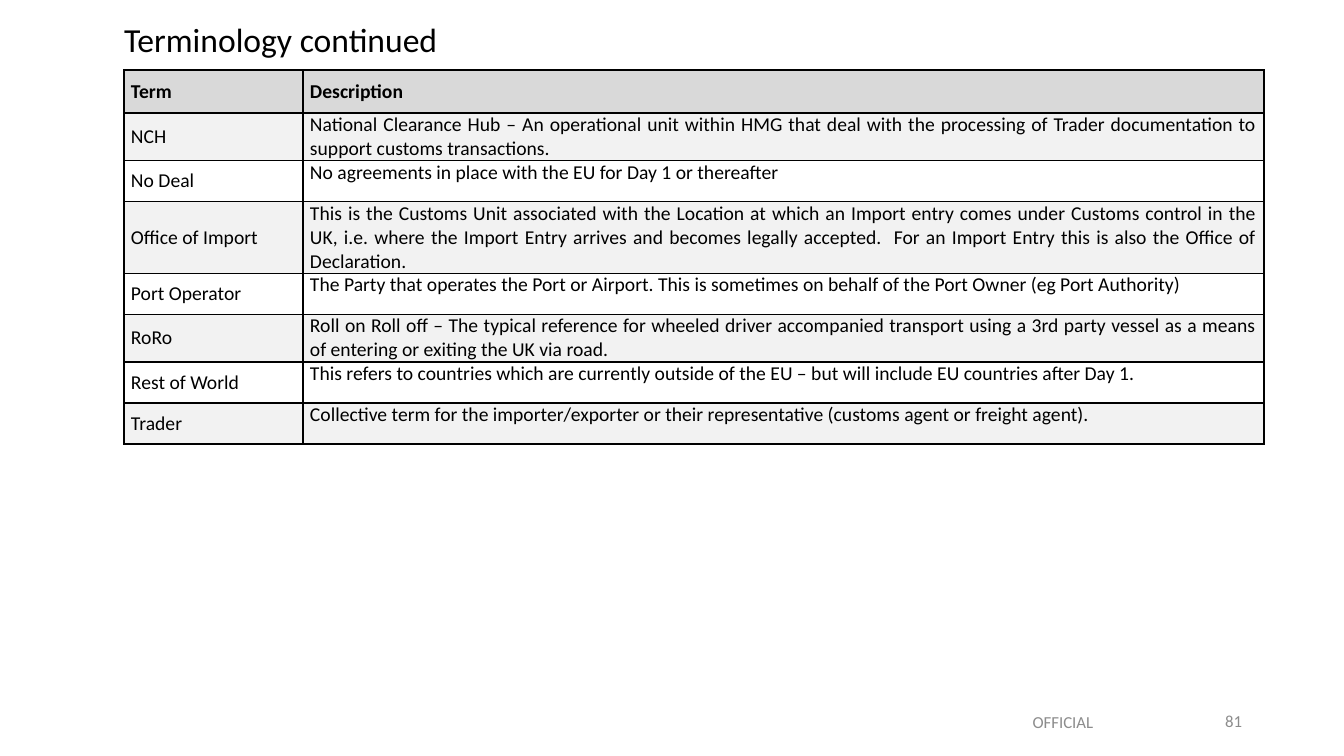
from lxml import etree
from pptx import Presentation, util as u
from pptx.dml.color import RGBColor
from pptx.enum import text
from pptx.oxml.ns import qn

PX = 914400 / 100.8
FONT = "Calibri"
BLACK, GREY, HEADER, BAND = "000000", "8C8C8C", "D9D9D9", "F2F2F2"
ALIGN, ANCHOR = text.PP_ALIGN, text.MSO_ANCHOR

TERMS = [
    ("Term", "Description"),
    ("NCH", "National Clearance Hub – An operational unit within HMG that deal with the "
            "processing of Trader documentation to support customs transactions."),
    ("No Deal", "No agreements in place with the EU for Day 1 or thereafter"),
    ("Office of Import", "This is the Customs Unit associated with the Location at which an Import "
                         "entry comes under Customs control in the UK, i.e. where the Import Entry "
                         "arrives and becomes legally accepted.  For an Import Entry this is also "
                         "the Office of Declaration."),
    ("Port Operator", "The Party that operates the Port or Airport. This is sometimes on behalf of "
                      "the Port Owner (eg Port Authority)"),
    ("RoRo", "Roll on Roll off – The typical reference for wheeled driver accompanied transport "
             "using a 3rd party vessel as a means of entering or exiting the UK via road."),
    ("Rest of World", "This refers to countries which are currently outside of the EU – but will "
                      "include EU countries after Day 1."),
    ("Trader", "Collective term for the importer/exporter or their representative (customs agent "
               "or freight agent)."),
]


def px(n):
    return u.Emu(round(n * PX))


def rgb(value):
    return RGBColor.from_string(value)


def write(tf, words, size, color, align, bold=False):
    """Fill a text frame with one formatted paragraph and return it."""
    tf.text = words
    p = tf.paragraphs[0]
    p.alignment = align
    font = p.runs[0].font
    font.name, font.size, font.bold = FONT, u.Pt(size), bold
    font.color.rgb = rgb(color)
    return p


def add_title(s, words, x, y, w, h):
    sp = s.shapes.title
    sp.left, sp.top, sp.width, sp.height = map(px, (x, y, w, h))
    tf = sp.text_frame
    tf.auto_size = text.MSO_AUTO_SIZE.NONE
    tf.vertical_anchor = ANCHOR.MIDDLE
    write(tf, words, 24, BLACK, ALIGN.LEFT).line_spacing = 0.9


def add_borders(cell):
    tcPr = cell._tc.get_or_add_tcPr()
    for i, side in enumerate(("a:lnL", "a:lnR", "a:lnT", "a:lnB")):
        ln = etree.Element(qn(side), w=str(u.Pt(1)))
        fill = etree.SubElement(ln, qn("a:solidFill"))
        etree.SubElement(fill, qn("a:srgbClr"), val=BLACK)
        tcPr.insert(i, ln)  # borders come before the fill


def format_cell(cell, words, row, col):
    header = row == 0
    centred = header or col == 0
    cell.margin_left = cell.margin_right = px(7)
    cell.margin_top = cell.margin_bottom = 0
    cell.vertical_anchor = ANCHOR.MIDDLE if centred else ANCHOR.TOP
    p = write(cell.text_frame, words, 14, BLACK,
              ALIGN.LEFT if centred else ALIGN.JUSTIFY, bold=header)
    p.space_before, p.space_after = u.Pt(6), u.Pt(3)
    if header or row % 2:
        cell.fill.solid()
        cell.fill.fore_color.rgb = rgb(HEADER if header else BAND)
    else:
        cell.fill.background()
    add_borders(cell)


def add_terms(s, rows, x, y, w, term_w, header_h, row_h):
    h = header_h + row_h * (len(rows) - 1)
    table = s.shapes.add_table(len(rows), 2, px(x), px(y), px(w), px(h)).table
    table.first_row = table.horz_banding = False
    table.columns[0].width, table.columns[1].width = px(term_w), px(w - term_w)
    for r, words in enumerate(rows):
        table.rows[r].height = px(row_h if r else header_h)
        for c, entry in enumerate(words):
            format_cell(table.cell(r, c), entry, r, c)


def add_footer(s, words, align, x, y, w, h):
    tf = s.shapes.add_textbox(*map(px, (x, y, w, h))).text_frame
    tf.word_wrap = True
    tf.vertical_anchor = ANCHOR.MIDDLE
    write(tf, words, 12, GREY, align)


def main():
    prs = Presentation()
    prs.slide_width, prs.slide_height = px(1344), px(756)
    s = prs.slides.add_slide(prs.slide_layouts[5])

    # Title
    add_title(s, "Terminology continued", 114, 18, 611, 47)
    # Glossary table
    add_terms(s, TERMS, 124, 70, 1140, 179, 43, 41)
    # Marking and page number
    add_footer(s, "OFFICIAL", ALIGN.CENTER, 836, 702, 454, 40)
    add_footer(s, "81", ALIGN.RIGHT, 950, 701, 302, 40)

    prs.save("out.pptx")


if __name__ == "__main__":
    main()
